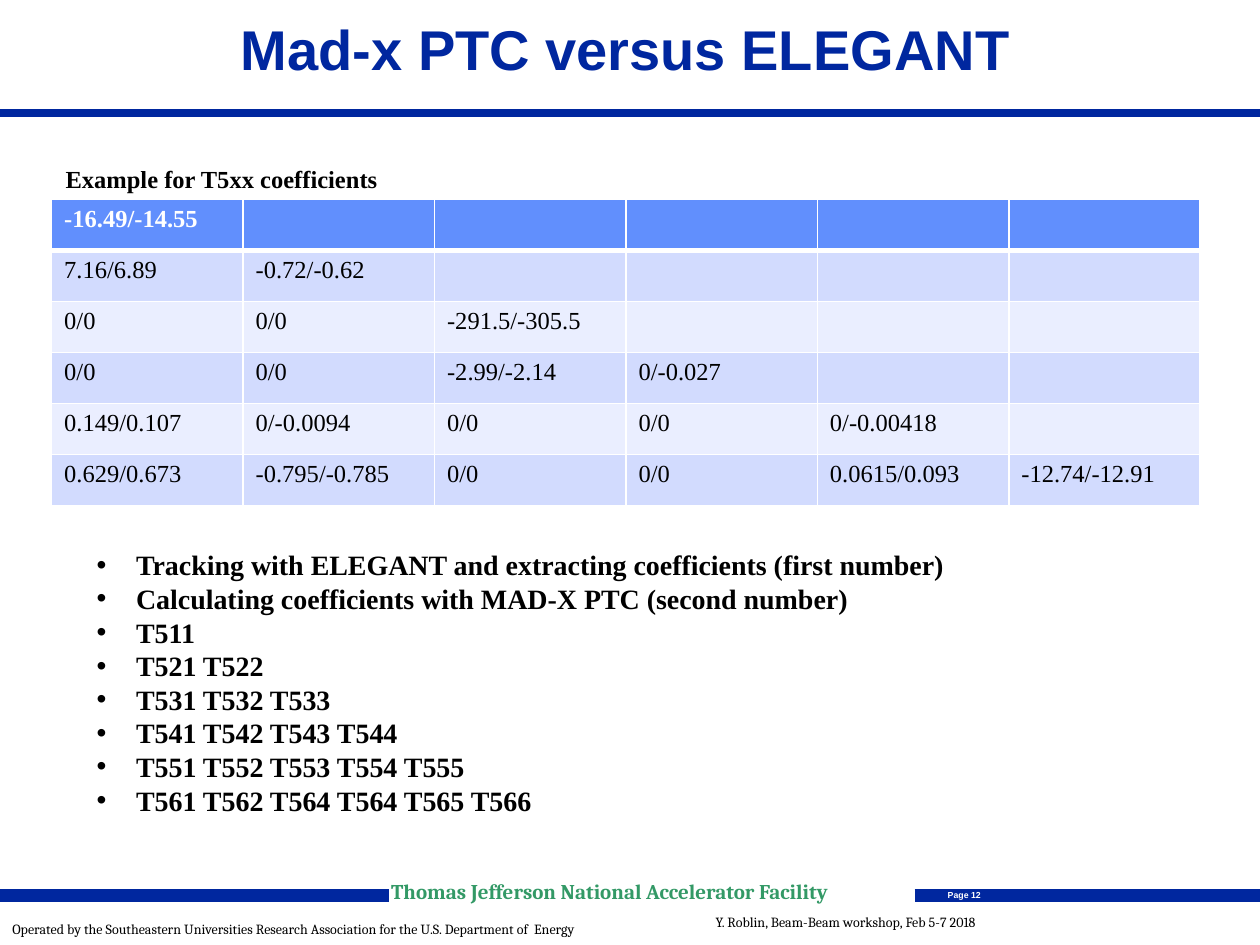
from pptx import Presentation
from pptx.dml.color import RGBColor
from pptx.enum.shapes import MSO_CONNECTOR
from pptx.enum.text import MSO_ANCHOR, MSO_AUTO_SIZE, PP_ALIGN
from pptx.oxml.ns import qn
from pptx.util import Pt
from lxml import etree

LEFT, CENTER = PP_ALIGN.LEFT, PP_ALIGN.CENTER
BLUE, BLACK, WHITE, GREEN = "00279F", "000000", "FFFFFF", "339966"
HEADER_FILL, BAND_FILLS = "618FFD", ("D2DBFE", "EAEEFF")
SERIF, SANS, FOOTER_FONT = "Times New Roman", "Arial", "Cambria"

TITLE = "Mad-x PTC versus ELEGANT"
TABLE_CAPTION = "Example for T5xx coefficients"
COEFFICIENTS = [
    ["-16.49/-14.55"],
    ["7.16/6.89", "-0.72/-0.62"],
    ["0/0", "0/0", "-291.5/-305.5"],
    ["0/0", "0/0", "-2.99/-2.14", "0/-0.027"],
    ["0.149/0.107", "0/-0.0094", "0/0", "0/0", "0/-0.00418"],
    ["0.629/0.673", "-0.795/-0.785", "0/0", "0/0", "0.0615/0.093", "-12.74/-12.91"],
]
BULLETS = [
    "Tracking with ELEGANT and extracting coefficients (first number)",
    "Calculating coefficients with MAD-X PTC (second number)",
    "T511",
    "T521 T522",
    "T531 T532 T533",
    "T541 T542 T543 T544",
    "T551 T552 T553 T554 T555",
    "T561 T562 T564 T564 T565 T566",
]
RULES = [(0, 720, 64.8, 4.5), (522.7, 720, 511.9, 7.25), (0, 222.5, 511.9, 7.25)]
OPERATOR = ("Operated by the Southeastern Universities Research Association "
            "for the U.S. Department of\u00a0 Energy")
FACILITY = "Thomas Jefferson National Accelerator Facility"
PAGE = "Page 12"
EVENT = "Y. Roblin, Beam-Beam workshop, Feb 5-7 2018"

TABLE_LEFT, TABLE_TOP, COLUMN_WIDTH, ROW_HEIGHT = 29.5, 113.8, 109.4, 29.2
BULLET_INDENT = 22.5


def color(value):
    return RGBColor.from_string(value)


def add_run(paragraph, text, size, font, fill, bold=False):
    run = paragraph.add_run()
    run.text = text
    run.font.size = Pt(size)
    run.font.name = font
    run.font.bold = bold
    run.font.color.rgb = color(fill)


def add_bullet(paragraph):
    properties = paragraph._p.get_or_add_pPr()
    properties.set("marL", str(Pt(BULLET_INDENT)))
    properties.set("indent", str(-Pt(BULLET_INDENT)))
    etree.SubElement(properties, qn("a:buFont"), typeface=SANS)
    etree.SubElement(properties, qn("a:buChar"), char="•")


def add_text(slide, box, lines, size, font, fill, bold=False, align=LEFT,
             spacing=None, wrap=True, bullets=False, inset=True):
    shape = slide.shapes.add_textbox(*map(Pt, box))
    frame = shape.text_frame
    frame.word_wrap = wrap
    if not inset:
        frame.margin_left = frame.margin_right = 0
        frame.margin_top = frame.margin_bottom = 0
    for index, line in enumerate(lines):
        paragraph = frame.add_paragraph() if index else frame.paragraphs[0]
        if bullets:
            add_bullet(paragraph)
        paragraph.alignment = align
        if spacing:
            paragraph.line_spacing = spacing
        add_run(paragraph, line, size, font, fill, bold)


def add_rule(slide, start, end, y, width):
    line = slide.shapes.add_connector(
        MSO_CONNECTOR.STRAIGHT, Pt(start), Pt(y), Pt(end), Pt(y))
    line.line.color.rgb = color(BLUE)
    line.line.width = Pt(width)
    etree.SubElement(line._element.spPr, qn("a:effectLst"))


def add_border(cell, side, width):
    border = etree.SubElement(cell._tc.get_or_add_tcPr(), qn(f"a:ln{side}"), w=str(Pt(width)))
    fill = etree.SubElement(border, qn("a:solidFill"))
    etree.SubElement(fill, qn("a:srgbClr"), val=WHITE)


def add_coefficients(slide):
    count = len(COEFFICIENTS)
    table = slide.shapes.add_table(
        count, count, Pt(TABLE_LEFT), Pt(TABLE_TOP),
        Pt(COLUMN_WIDTH * count), Pt(ROW_HEIGHT * count)).table
    table.first_row = table.horz_banding = False
    for column in table.columns:
        column.width = Pt(COLUMN_WIDTH)
    for row_index, values in enumerate(COEFFICIENTS):
        table.rows[row_index].height = Pt(ROW_HEIGHT)
        header = row_index == 0
        fill = HEADER_FILL if header else BAND_FILLS[(row_index - 1) % 2]
        padded = values + [""] * (count - len(values))
        for column_index, value in enumerate(padded):
            cell = table.cell(row_index, column_index)
            for side in "LRTB":
                thick = (header and side == "B") or (row_index == 1 and side == "T")
                add_border(cell, side, 3 if thick else 1)
            cell.fill.solid()
            cell.fill.fore_color.rgb = color(fill)
            add_run(cell.text_frame.paragraphs[0], value, 14, SERIF,
                    WHITE if header else BLACK, header)


def add_title(slide):
    title = slide.shapes.title
    title.left, title.top, title.width, title.height = map(Pt, (13, 1.4, 689, 58.3))
    frame = title.text_frame
    frame.auto_size = MSO_AUTO_SIZE.NONE
    frame.vertical_anchor = MSO_ANCHOR.MIDDLE
    paragraph = frame.paragraphs[0]
    paragraph.alignment = CENTER
    paragraph.line_spacing = 0.85
    add_run(paragraph, TITLE, 32, SANS, BLUE, True)


def main():
    presentation = Presentation()
    presentation.slide_width, presentation.slide_height = Pt(720), Pt(540)
    slide = presentation.slides.add_slide(presentation.slide_layouts[5])
    for rule in RULES:
        add_rule(slide, *rule)
    add_text(slide, (0, 525.6, 336.2, 13), [OPERATOR], 8, FOOTER_FONT, BLACK, spacing=0.6)
    add_text(slide, (223.5, 504.7, 300, 13.7), [FACILITY], 12, FOOTER_FONT, GREEN,
             bold=True, spacing=0.8, inset=False)
    add_text(slide, (534.2, 504.7, 33.8, 13), [PAGE], 5, SANS, WHITE,
             bold=True, align=CENTER, wrap=False)
    add_text(slide, (401.8, 522, 180, 13), [EVENT], 8, FOOTER_FONT, BLACK, spacing=0.6)
    add_title(slide)
    add_coefficients(slide)
    add_text(slide, (48.2, 309.6, 563.8, 162.7), BULLETS, 16, SERIF, BLACK,
             bold=True, bullets=True)
    add_text(slide, (29.5, 90, 194.4, 24.5), [TABLE_CAPTION], 14, SERIF, BLACK,
             bold=True, align=CENTER, wrap=False)
    presentation.save("out.pptx")


if __name__ == "__main__":
    main()
